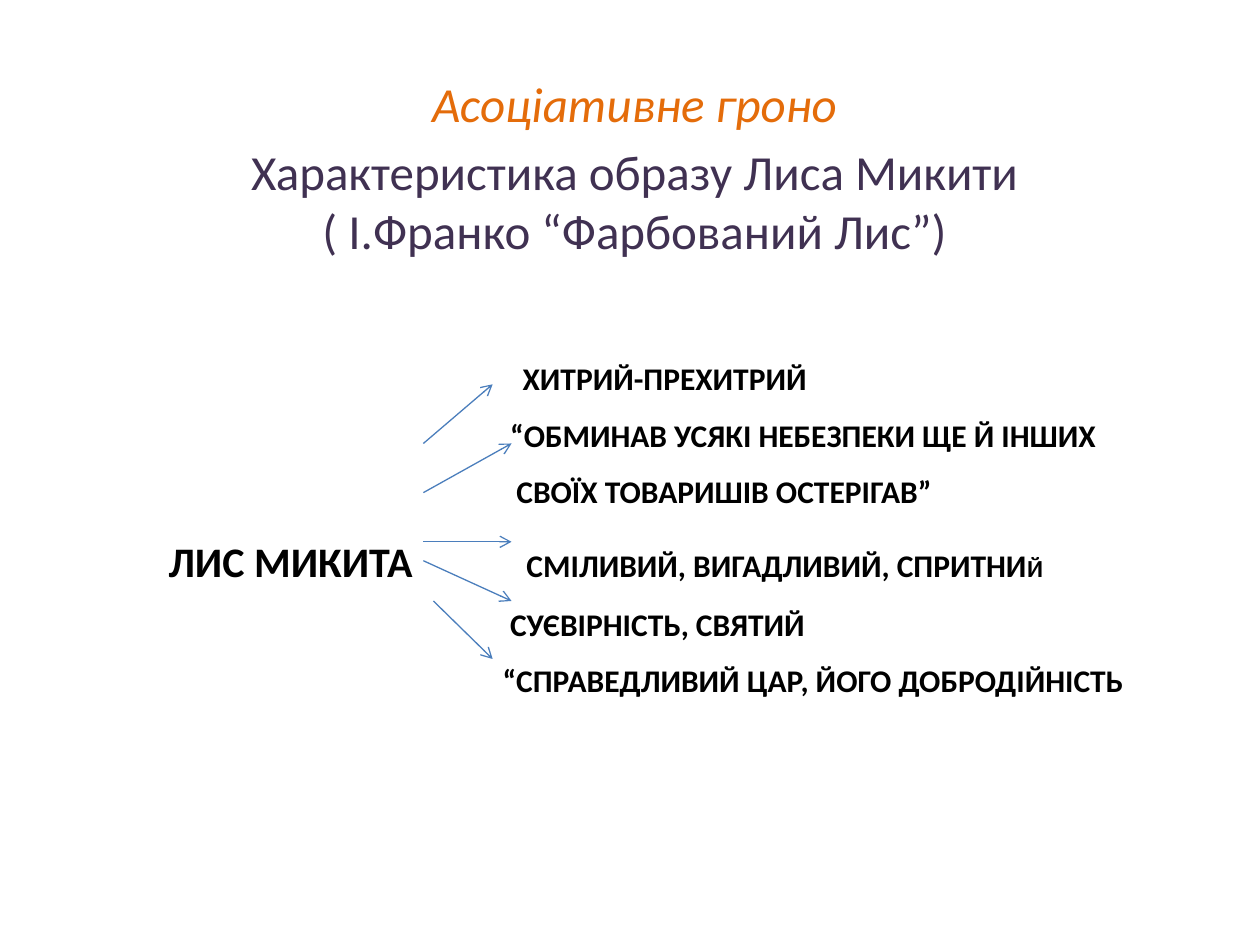
from dataclasses import dataclass

from lxml.etree import SubElement
from pptx import Presentation
from pptx.dml.color import RGBColor
from pptx.enum.shapes import MSO_CONNECTOR
from pptx.enum.text import MSO_ANCHOR, PP_ALIGN
from pptx.oxml.ns import qn
from pptx.util import Inches, Pt


@dataclass(frozen=True)
class Theme:
    font: str = "Calibri"
    accent: str = "E46C0A"
    heading: str = "403152"
    body: str = "000000"
    arrow: str = "4B7EBC"
    heading_size: int = 28
    hero_size: int = 24
    trait_size: int = 18
    small_size: int = 14
    arrow_width: float = 0.75


def add_run(p, text, *, theme, size, color, bold=False, italic=False):
    r = p.add_run()
    r.text = text
    r.font.name = theme.font
    r.font.size = Pt(size)
    r.font.bold = bold
    r.font.italic = italic
    r.font.color.rgb = RGBColor.from_string(color)


def add_tab_stops(p, stops):
    tabs = SubElement(p._p.get_or_add_pPr(), qn("a:tabLst"))
    for stop in stops:
        SubElement(tabs, qn("a:tab"), pos=str(Inches(stop)), algn="l")


class SlideBuilder:
    def __init__(self, s, theme):
        self.s = s
        self.theme = theme

    def text_box(self, left, top, width, height, anchor):
        sp = self.s.shapes.add_textbox(
            Inches(left), Inches(top), Inches(width), Inches(height))
        tf = sp.text_frame
        tf.word_wrap = True
        tf.vertical_anchor = anchor
        return tf

    def paragraphs(self, tf, lines):
        """Yield one paragraph for each line, with the line itself."""
        for i, line in enumerate(lines):
            yield (tf.add_paragraph() if i else tf.paragraphs[0]), line

    def heading(self, lines):
        """Lines are (text, colour, italic, space before in points)."""
        tf = self.text_box(1.61, 0.6, 6.85, 1.51, MSO_ANCHOR.BOTTOM)
        for p, (text, color, italic, before) in self.paragraphs(tf, lines):
            p.alignment = PP_ALIGN.CENTER
            p.space_before = Pt(before)
            add_run(p, text, theme=self.theme, size=self.theme.heading_size,
                    color=color, italic=italic)

    def cluster(self, lines):
        """Lines are (tab stops, runs); each run is (text, size) after its tab."""
        tf = self.text_box(0.79, 2.65, 8.5, 4.07, MSO_ANCHOR.TOP)
        for p, (stops, runs) in self.paragraphs(tf, lines):
            p.line_spacing = 1.5
            add_tab_stops(p, stops)
            for text, size in runs:
                add_run(p, text, theme=self.theme, size=size,
                        color=self.theme.body, bold=True)

    def arrow(self, start, end):
        line = self.s.shapes.add_connector(
            MSO_CONNECTOR.STRAIGHT, *map(Inches, start + end))
        line.line.color.rgb = RGBColor.from_string(self.theme.arrow)
        line.line.width = Pt(self.theme.arrow_width)
        SubElement(line.line._get_or_add_ln(), qn("a:tailEnd"), type="arrow")
        SubElement(line._element.spPr, qn("a:effectLst"))


def main():
    prs = Presentation()
    prs.slide_width, prs.slide_height = Inches(10), Inches(7.5)
    theme = Theme()
    slide = SlideBuilder(prs.slides.add_slide(prs.slide_layouts[6]), theme)

    def trait(stop, text):
        return [stop], [("\t" + text, theme.trait_size)]

    slide.cluster([
        trait(3.26, "ХИТРИЙ-ПРЕХИТРИЙ"),
        trait(3.16, "“ОБМИНАВ УСЯКІ НЕБЕЗПЕКИ ЩЕ Й ІНШИХ"),
        trait(3.21, "СВОЇХ ТОВАРИШІВ ОСТЕРІГАВ”"),
        ([0.45, 3.29], [
            ("\tЛИС МИКИТА", theme.hero_size),
            ("\tСМІЛИВИЙ, ВИГАДЛИВИЙ, СПРИТНИ", theme.trait_size),
            ("Й", theme.small_size),
        ]),
        trait(3.16, "СУЄВІРНІСТЬ, СВЯТИЙ"),
        trait(3.1, "“СПРАВЕДЛИВИЙ ЦАР, ЙОГО ДОБРОДІЙНІСТЬ"),
    ])
    slide.heading([
        ("Асоціативне гроно", theme.accent, True, 0),
        ("Характеристика образу Лиса Микити", theme.heading, False, 5.6),
        ("( І.Франко “Фарбований Лис”)", theme.heading, False, 0),
    ])
    for start, end in [
        ((3.36, 3.91), (4.06, 3.52)),
        ((3.36, 3.52), (3.91, 3.05)),
        ((3.36, 4.3), (4.06, 4.3)),
        ((3.36, 4.45), (4.06, 4.77)),
        ((3.44, 4.77), (3.91, 5.23)),
    ]:
        slide.arrow(start, end)

    prs.save("out.pptx")


if __name__ == "__main__":
    main()
